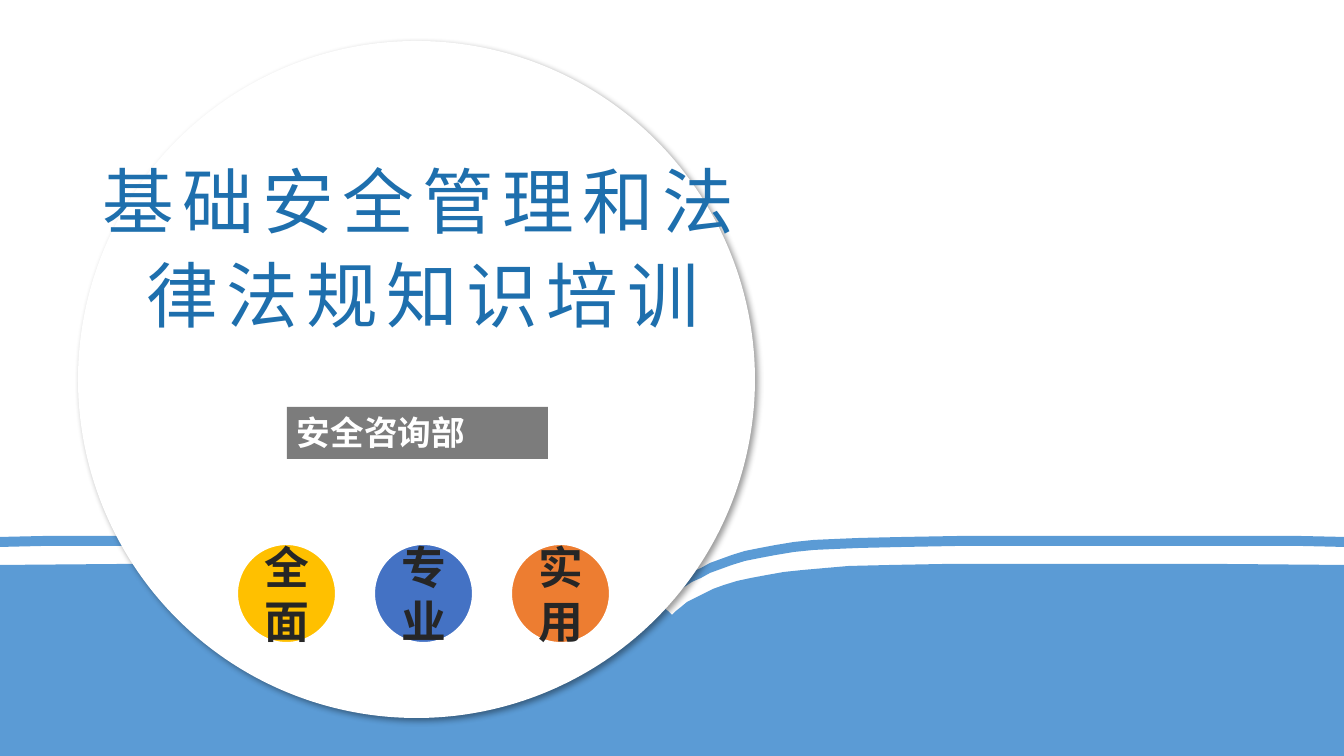
from dataclasses import dataclass

from lxml import etree
from pptx import Presentation
from pptx.dml.color import RGBColor
from pptx.enum.shapes import MSO_SHAPE
from pptx.enum.text import MSO_ANCHOR, PP_ALIGN
from pptx.oxml.ns import qn
from pptx.shapes.autoshape import Shape
from pptx.slide import Slide
from pptx.util import Emu, Pt

OVAL, RECTANGLE = MSO_SHAPE.OVAL, MSO_SHAPE.RECTANGLE
TOP, MIDDLE, BOTTOM = MSO_ANCHOR.TOP, MSO_ANCHOR.MIDDLE, MSO_ANCHOR.BOTTOM
CENTER, JUSTIFY = PP_ALIGN.CENTER, PP_ALIGN.JUSTIFY

WIDTH, HEIGHT = 1344, 756
MIDDLE_X = WIDTH // 2
EMU_PER_PX = 12192000 / WIDTH
WAVE_BLUE = "5B9BD5"
WHITE = "FFFFFF"
CHINESE_FONT = "Noto Sans CJK SC"
BAND_THICKNESS = 10

Point = tuple[int, int]

# Right half of each wave: distance from the middle of the slide, and y
BAND_PROFILE: list[Point] = [
    (0, 588), (4, 584), (8, 580), (14, 576), (20, 572), (29, 568), (38, 563),
    (49, 559), (60, 555), (73, 551), (88, 548), (104, 545), (122, 542),
    (142, 540), (164, 539), (188, 538), (232, 537), (288, 536), (627, 536),
    (672, 537),
]
SEA_PROFILE: list[Point] = [
    (0, 615), (4, 611), (9, 607), (15, 602), (23, 598), (31, 594), (41, 589),
    (52, 585), (65, 581), (79, 578), (95, 575), (112, 572), (131, 570),
    (154, 568), (177, 566), (219, 565), (272, 564), (551, 564), (672, 565),
]


@dataclass
class TextStyle:
    size: float
    font: str
    color: str
    bold: bool
    align: PP_ALIGN
    anchor: MSO_ANCHOR


@dataclass
class Badge:
    text: str
    fill: str


TITLE_STYLE = TextStyle(51.2, CHINESE_FONT, "1E6FAD", False, CENTER, BOTTOM)
LABEL_STYLE = TextStyle(24, CHINESE_FONT, WHITE, True, JUSTIFY, TOP)
BADGE_STYLE = TextStyle(32, "Arial", "262626", True, CENTER, MIDDLE)

BADGES = [Badge("全面", "FFC000"), Badge("专业", "4472C4"), Badge("实用", "ED7D31")]
BADGE_LEFT, BADGE_TOP, BADGE_SIZE, BADGE_STEP = 237, 544, 99, 137


def px(length: int) -> Emu:
    return Emu(round(length * EMU_PER_PX))


def rgb(color: str) -> RGBColor:
    return RGBColor.from_string(color)


def paint(shape: Shape, fill: str) -> None:
    """Give a shape a plain fill, with no outline and no shadow."""
    shape.shadow.inherit = False
    shape.fill.solid()
    shape.fill.fore_color.rgb = rgb(fill)
    shape.line.fill.background()


def mirrored(profile: list[Point]) -> list[Point]:
    """Return the whole wave, left to right, from its right half."""
    left = [(MIDDLE_X - dx, y) for dx, y in reversed(profile)]
    return left + [(MIDDLE_X + dx, y) for dx, y in profile[1:]]


def add_outline(slide: Slide, points: list[Point], fill: str) -> None:
    builder = slide.shapes.build_freeform(*points[0], scale=EMU_PER_PX)
    builder.add_line_segments(points[1:], close=True)
    paint(builder.convert_to_shape(), fill)


def add_figure(slide: Slide, kind: MSO_SHAPE, left: int, top: int,
               width: int, height: int, fill: str) -> Shape:
    shape = slide.shapes.add_shape(kind, px(left), px(top), px(width), px(height))
    paint(shape, fill)
    return shape


def write(shape: Shape, text: str, style: TextStyle) -> None:
    frame = shape.text_frame
    frame.text = text
    frame.word_wrap = True
    frame.vertical_anchor = style.anchor
    paragraph = frame.paragraphs[0]
    paragraph.alignment = style.align
    run = paragraph.runs[0]
    run.font.size = Pt(style.size)
    run.font.bold = style.bold
    run.font.color.rgb = rgb(style.color)
    run.font.name = style.font
    properties = run._r.get_or_add_rPr()
    etree.SubElement(properties, qn("a:ea"), typeface=style.font)


def add_soft_shadow(shape: Shape) -> None:
    effects = shape._element.spPr.find(qn("a:effectLst"))
    shadow = etree.SubElement(
        effects, qn("a:outerShdw"), blurRad=str(Pt(4)), dist=str(Pt(3)),
        dir=str(45 * 60000), algn="tl", rotWithShape="0")
    color = etree.SubElement(shadow, qn("a:srgbClr"), val="000000")
    etree.SubElement(color, qn("a:alpha"), val="40000")


def add_waves(slide: Slide) -> None:
    sea = mirrored(SEA_PROFILE)
    add_outline(slide, sea + [(WIDTH, HEIGHT), (0, HEIGHT)], WAVE_BLUE)
    band = mirrored(BAND_PROFILE)
    lower_edge = [(x, y + BAND_THICKNESS) for x, y in reversed(band)]
    add_outline(slide, band + lower_edge, WAVE_BLUE)


def add_title(slide: Slide) -> None:
    title = slide.shapes.add_textbox(px(92), px(143), px(662), px(194))
    write(title, "基础安全管理和法律法规知识培训", TITLE_STYLE)
    title.text_frame.margin_bottom = 0
    paragraph = title.text_frame.paragraphs[0]
    paragraph.line_spacing = 1.1
    paragraph.runs[0]._r.get_or_add_rPr().set("spc", "600")


def add_badges(slide: Slide) -> None:
    for index, badge in enumerate(BADGES):
        left = BADGE_LEFT + index * BADGE_STEP
        circle = add_figure(slide, OVAL, left, BADGE_TOP,
                            BADGE_SIZE, BADGE_SIZE, badge.fill)
        circle.line.color.rgb = rgb(WHITE)
        circle.line.width = Pt(1.5)
        write(circle, badge.text, BADGE_STYLE)


def main() -> None:
    presentation = Presentation()
    presentation.slide_width = px(WIDTH)
    presentation.slide_height = px(HEIGHT)
    slide = presentation.slides.add_slide(presentation.slide_layouts[6])

    add_waves(slide)
    add_soft_shadow(add_figure(slide, OVAL, 78, 41, 677, 677, WHITE))
    add_title(slide)
    label = add_figure(slide, RECTANGLE, 287, 407, 261, 52, "7C7C7C")
    write(label, "安全咨询部", LABEL_STYLE)
    add_badges(slide)

    presentation.save("out.pptx")


if __name__ == "__main__":
    main()
